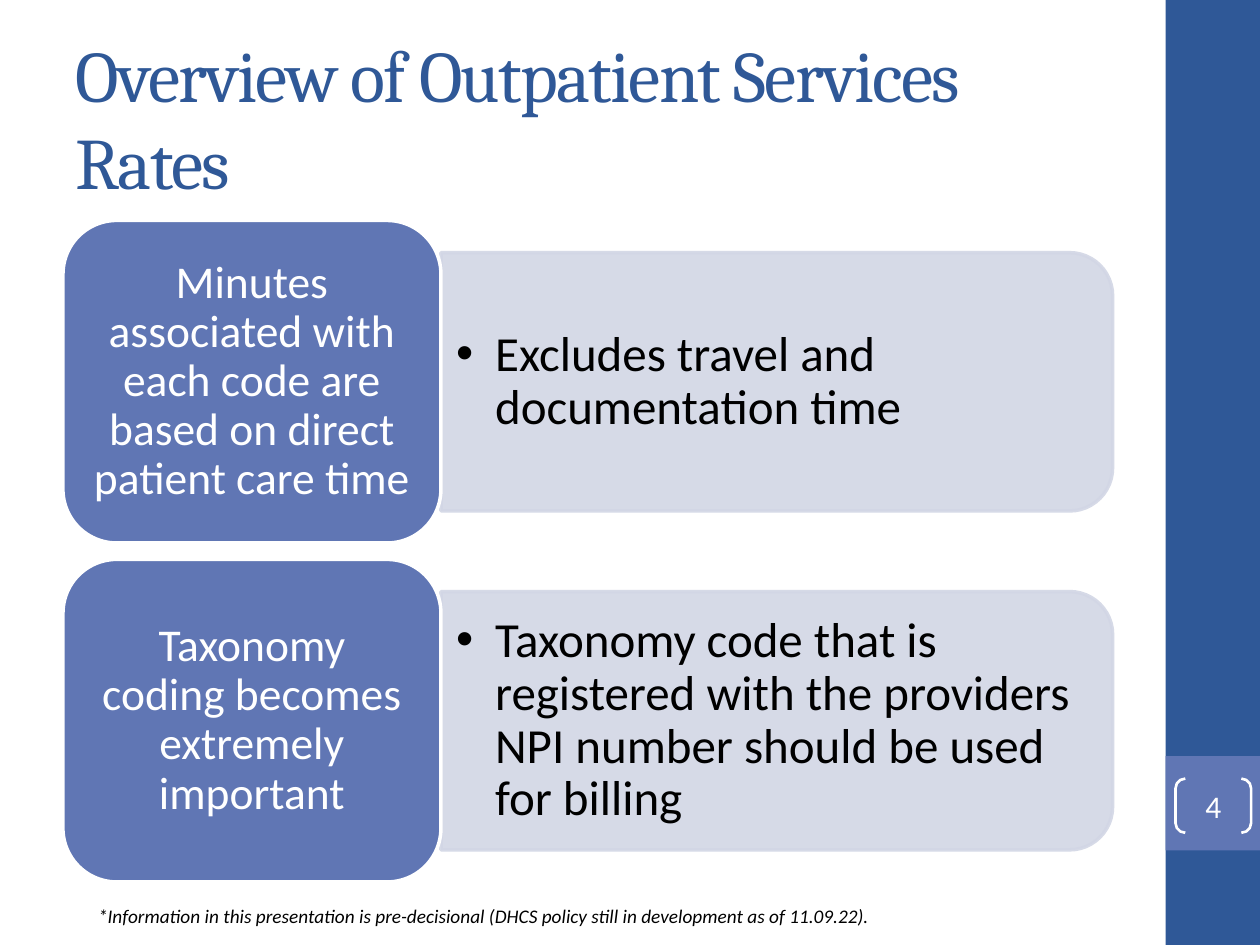
from dataclasses import dataclass

from lxml.etree import SubElement
from pptx import Presentation
from pptx.dml.color import RGBColor as RGB
from pptx.enum.shapes import MSO_SHAPE as SHAPE
from pptx.enum.text import MSO_ANCHOR as ANCHOR, MSO_AUTO_SIZE as AUTO, PP_ALIGN as ALIGN
from pptx.oxml.ns import qn
from pptx.util import Inches, Pt


@dataclass(frozen=True)
class Theme:
    navy: RGB = RGB(0x2F, 0x58, 0x97)
    blue: RGB = RGB(0x60, 0x76, 0xB4)
    pale: RGB = RGB(0xD2, 0xD6, 0xE5)
    white: RGB = RGB(0xFF, 0xFF, 0xFF)
    black: RGB = RGB(0, 0, 0)
    heading: str = "Cambria"
    body: str = "Calibri"
    title_size: float = 41.4
    bullet_size: float = 28
    label_size: float = 26
    number_size: float = 18
    note_size: float = 11


@dataclass(frozen=True)
class Box:
    left: float
    top: float
    width: float
    height: float

    def lengths(self) -> list:
        return [Inches(v) for v in (self.left, self.top, self.width, self.height)]


@dataclass(frozen=True)
class Row:
    label: str
    detail: str


T = Theme()
ROWS = [
    Row("Minutes associated with each code are based on direct patient care time",
        "Excludes travel and documentation time"),
    Row("Taxonomy coding becomes extremely important",
        "Taxonomy code that is registered with the providers NPI number should be used for billing"),
]
LEFT, TOP, LABEL_W, LABEL_H, GAP = 0.5, 1.75, 3, 2.56, 0.13
PANEL_W, PANEL_H = 5.33, 2.05


def place(sp, box: Box) -> None:
    for name, value in zip(("left", "top", "width", "height"), box.lengths()):
        setattr(sp, name, value)


def write(sp, text: str, size: float, color: RGB, font: str = T.body,
          italic: bool = False, align=ALIGN.LEFT, anchor=ANCHOR.MIDDLE,
          inset: tuple = (0.1, 0.05), spacing: float = 1.0):
    tf = sp.text_frame
    x, y = (Inches(v) for v in inset)
    frame = dict(word_wrap=True, auto_size=AUTO.NONE, vertical_anchor=anchor,
                 margin_left=x, margin_right=x, margin_top=y, margin_bottom=y)
    for name, value in frame.items():
        setattr(tf, name, value)
    p = tf.paragraphs[0]
    for name, value in dict(alignment=align, line_spacing=spacing, space_before=Pt(0)).items():
        setattr(p, name, value)
    r = p.add_run()
    r.text = text
    for name, value in dict(name=font, size=Pt(size), italic=italic).items():
        setattr(r.font, name, value)
    r.font.color.rgb = color
    return p


def add_shape(s, kind, box: Box, fill=None, line=None, width: float = 2):
    sp = s.shapes.add_shape(kind, *box.lengths())
    sp.shadow.inherit = False
    if fill is None:
        sp.fill.background()
    else:
        sp.fill.solid()
        sp.fill.fore_color.rgb = fill
    if line is None:
        sp.line.fill.background()
    else:
        sp.line.color.rgb = line
        sp.line.width = Pt(width)
    return sp


def add_row(s, row: Row, ph, top: float) -> None:
    mid = top + LABEL_H / 2
    panel_left = LEFT + LABEL_W
    panel = add_shape(s, SHAPE.ROUND_2_SAME_RECTANGLE,
                      Box(panel_left + (PANEL_W - PANEL_H) / 2, mid - PANEL_W / 2, PANEL_H, PANEL_W),
                      T.pale, T.pale)
    panel.rotation = 90
    for color in panel._element.spPr.iter(qn("a:srgbClr")):
        SubElement(color, qn("a:alpha"), val="90000")

    place(ph, Box(panel_left, mid - 0.925, 5.23, 1.85))
    p = write(ph, row.detail, T.bullet_size, T.black, inset=(0.12, 0.06), spacing=0.9)
    pPr = p._p.get_or_add_pPr()
    for name, value in dict(marL=Inches(0.31), indent=Inches(-0.31)).items():
        pPr.set(name, str(value))
    ph._element.getparent().append(ph._element)

    label = add_shape(s, SHAPE.ROUNDED_RECTANGLE, Box(LEFT, top, LABEL_W, LABEL_H), T.blue, T.white)
    write(label, row.label, T.label_size, T.white, align=ALIGN.CENTER, inset=(0.11, 0.05), spacing=0.9)


def main() -> None:
    prs = Presentation()
    prs.slide_width, prs.slide_height = Inches(10), Inches(7.5)
    s = prs.slides.add_slide(prs.slide_layouts[3])

    add_shape(s, SHAPE.RECTANGLE, Box(9.25, 0, 0.75, 7.5), T.navy)
    add_shape(s, SHAPE.RECTANGLE, Box(9.25, 6, 0.75, 0.75), T.blue)

    title = s.shapes.title
    place(title, Box(0.5, 0.3, 8.33, 1.25))
    p = write(title, "Overview of Outpatient Services Rates", T.title_size, T.navy, T.heading)
    p.runs[0]._r.get_or_add_rPr().set("spc", "-100")

    for i, row in enumerate(ROWS):
        add_row(s, row, s.placeholders[i + 1], TOP + i * (LABEL_H + GAP))

    note = s.shapes.add_textbox(*Box(0.68, 7.13, 8.26, 0.29).lengths())
    write(note, "*Information in this presentation is pre-decisional "
                "(DHCS policy still in development as of 11.09.22).",
          T.note_size, T.black, italic=True, anchor=ANCHOR.TOP)

    number = add_shape(s, SHAPE.DOUBLE_BRACKET, Box(9.33, 6.18, 0.6, 0.43), line=T.white, width=1.5)
    number.adjustments[0] = 0.18
    write(number, "4", T.number_size, T.white, align=ALIGN.CENTER, inset=(0, 0))

    prs.save("out.pptx")


if __name__ == "__main__":
    main()
